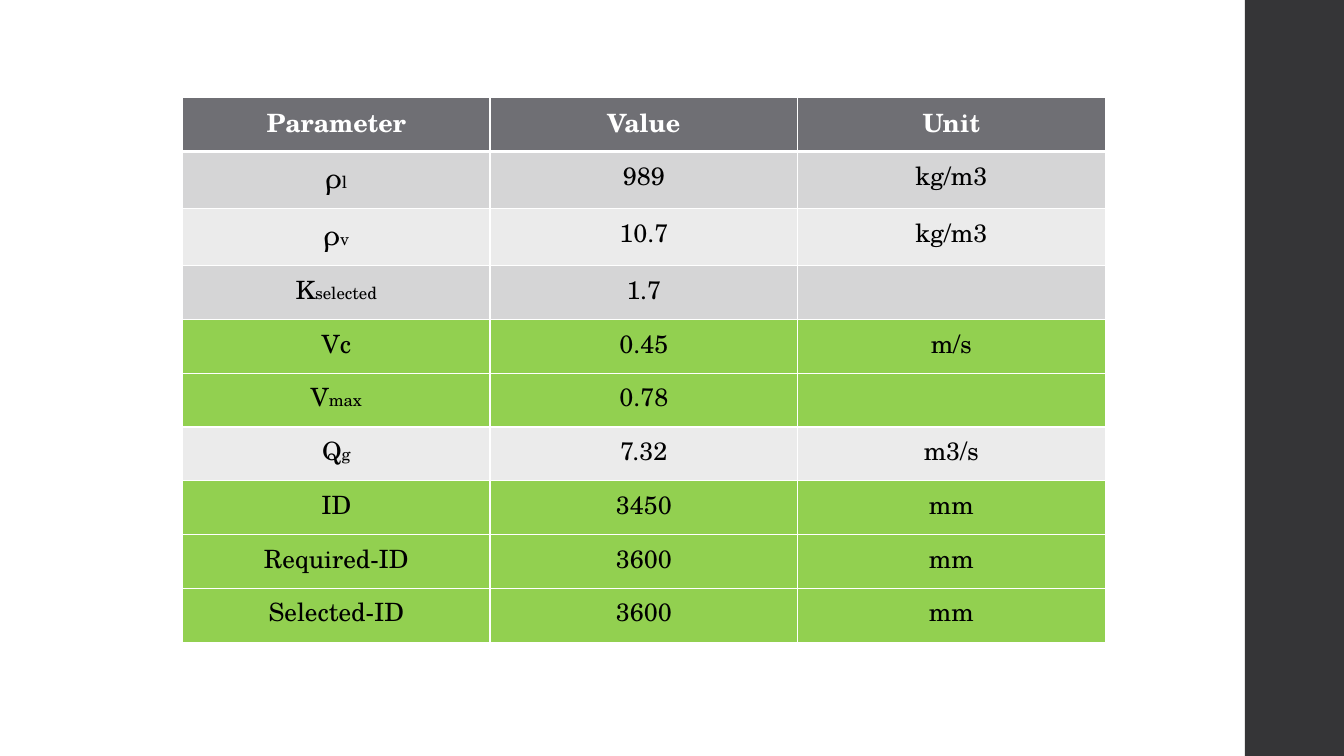
"""Build a slide with a table of vessel sizing parameters."""
from lxml.etree import SubElement
from pptx import Presentation
from pptx.dml.color import RGBColor
from pptx.enum.shapes import MSO_SHAPE as Shape
from pptx.enum.text import PP_ALIGN as Align
from pptx.oxml.ns import qn
from pptx.util import Cm, Pt

COLORS = {
    "sidebar": "353537",
    "header": "6F6F74",
    "dark": "D5D5D6",
    "light": "EBEBEB",
    "green": "92D050",
    "white": "FFFFFF",
    "black": "000000",
}
FONT = "TeX Gyre Schola"
TEXT_SIZE, SYMBOL_SIZE, INDEX_SIZE = 18, 20, 12

HEADINGS = ["Parameter", "Value", "Unit"]
PARAMETERS = [
    ("ρ", "l", "989", "kg/m3", "dark"),
    ("ρ", "v", "10.7", "kg/m3", "light"),
    ("K", "selected", "1.7", "", "dark"),
    ("Vc", "", "0.45", "m/s", "green"),
    ("V", "max", "0.78", "", "green"),
    ("Q", "g", "7.32", "m3/s", "light"),
    ("ID", "", "3450", "mm", "green"),
    ("Required-ID", "", "3600", "mm", "green"),
    ("Selected-ID", "", "3600", "mm", "green"),
]

SLIDE_WIDTH, SLIDE_HEIGHT = 33.87, 19.05
SIDEBAR_WIDTH = 2.5
TABLE_LEFT, TABLE_TOP = 4.6, 2.46
COLUMN_WIDTH = 7.75
ROW_HEIGHT, SYMBOL_ROW_HEIGHT = 1.355, 1.44


def add_borders(cell, top, bottom):
    properties = cell._tc.get_or_add_tcPr()
    for side, width in (("L", 1), ("R", 1), ("T", top), ("B", bottom)):
        line = SubElement(properties, qn(f"a:ln{side}"), w=str(Pt(width)))
        fill = SubElement(line, qn("a:solidFill"))
        SubElement(fill, qn("a:srgbClr"), val=COLORS["white"])


def fill_cell(cell, spans, fill, color="black", bold=False, top=1, bottom=1):
    add_borders(cell, top, bottom)
    cell.fill.solid()
    cell.fill.fore_color.rgb = RGBColor.from_string(COLORS[fill])
    para = cell.text_frame.paragraphs[0]
    para.alignment = Align.CENTER
    for text, size in spans:
        if text:
            span = para.add_run()
            span.text = text
            span.font.name = FONT
            span.font.size = Pt(size)
            span.font.bold = bold
            span.font.color.rgb = RGBColor.from_string(COLORS[color])


def add_sidebar(page):
    box = page.shapes.add_shape(
        Shape.RECTANGLE, Cm(SLIDE_WIDTH - SIDEBAR_WIDTH), 0,
        Cm(SIDEBAR_WIDTH), Cm(SLIDE_HEIGHT))
    box.shadow.inherit = False
    box.fill.solid()
    box.fill.fore_color.rgb = RGBColor.from_string(COLORS["sidebar"])
    box.line.fill.background()


def add_parameter_table(page):
    heights = [ROW_HEIGHT] + [
        SYMBOL_ROW_HEIGHT if row[0] == "ρ" else ROW_HEIGHT for row in PARAMETERS]
    table = page.shapes.add_table(
        len(heights), len(HEADINGS), Cm(TABLE_LEFT), Cm(TABLE_TOP),
        Cm(COLUMN_WIDTH * len(HEADINGS)), Cm(sum(heights))).table
    for column in table.columns:
        column.width = Cm(COLUMN_WIDTH)
    for row, height in zip(table.rows, heights):
        row.height = Cm(height)

    for column, heading in enumerate(HEADINGS):
        fill_cell(table.cell(0, column), [(heading, TEXT_SIZE)], "header",
                  color="white", bold=True, bottom=3)
    for row, (symbol, index, value, unit, fill) in enumerate(PARAMETERS, 1):
        symbol_size = SYMBOL_SIZE if symbol == "ρ" else TEXT_SIZE
        contents = [
            [(symbol, symbol_size), (index, INDEX_SIZE)],
            [(value, TEXT_SIZE)],
            [(unit, TEXT_SIZE)],
        ]
        for column, spans in enumerate(contents):
            fill_cell(table.cell(row, column), spans, fill,
                      top=3 if row == 1 else 1)


def main():
    deck = Presentation()
    deck.slide_width, deck.slide_height = Cm(SLIDE_WIDTH), Cm(SLIDE_HEIGHT)
    page = deck.slides.add_slide(deck.slide_layouts[6])
    add_sidebar(page)
    add_parameter_table(page)
    deck.save("out.pptx")


if __name__ == "__main__":
    main()
